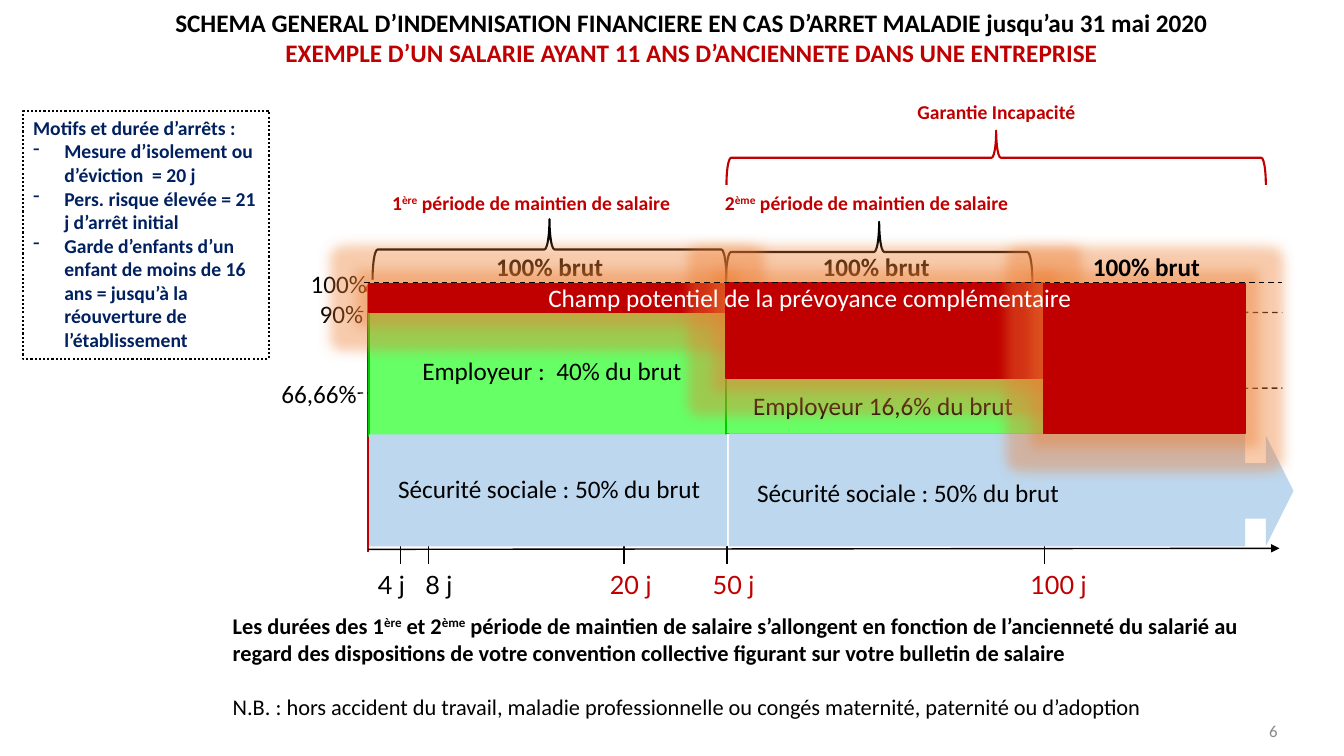
import pptx
import pptx.util
import pptx.dml.color
import pptx.enum.dml
import pptx.enum.shapes
import pptx.enum.text
import pptx.oxml
import pptx.oxml.ns
import lxml.etree

RGBColor = pptx.dml.color.RGBColor
BLACK = RGBColor(0x00, 0x00, 0x00)
WHITE = RGBColor(0xFF, 0xFF, 0xFF)
GREY = RGBColor(0x89, 0x89, 0x89)
RED = RGBColor(0xC0, 0x00, 0x00)
NAVY = RGBColor(0x00, 0x20, 0x60)
BLUE = RGBColor(0xBD, 0xD7, 0xEE)
GREEN = RGBColor(0x66, 0xFF, 0x66)
DARK_GREEN = RGBColor(0x00, 0xCC, 0x00)

SHAPE = pptx.enum.shapes.MSO_SHAPE
DASH = pptx.enum.dml.MSO_LINE.DASH
DOTS = pptx.enum.dml.MSO_LINE.ROUND_DOT
ALIGN = pptx.enum.text.PP_ALIGN
ANCHOR = pptx.enum.text.MSO_ANCHOR
FIT = pptx.enum.text.MSO_AUTO_SIZE

ROWS = 75
START, DAY_50, DAY_100, END, AXIS_END = 36.6, 72, 103.5, 123.5, 127.2
FULL, NINETY, EMPLOYER_2, HALF, BASE = 28.1, 31, 37.5, 43, 54.2

GLOW = ('<a:effectLst %s><a:glow rad="228600"><a:srgbClr val="ED7D31">'
        '<a:alpha val="40000"/></a:srgbClr></a:glow></a:effectLst>'
        % pptx.oxml.ns.nsdecls("a"))


def add_sub(parent, tag, **attrs):
    return lxml.etree.SubElement(parent, pptx.oxml.ns.qn(tag), attrs)


def write(p, text, size=18, color=BLACK, bold=False, font="Calibri",
          align=ALIGN.LEFT, before=0, bullet=None):
    p.alignment = align
    if before:
        p.space_before = pptx.util.Pt(before)
    if bullet:
        pPr = p._p.get_or_add_pPr()
        indent = pptx.util.Inches(0.31)
        pPr.set("marL", str(indent))
        pPr.set("indent", str(-indent))
        add_sub(pPr, "a:buChar", char=bullet)
    for i, part in enumerate(text.split("^")):
        r = p.add_run()
        r.text = part
        r.font.size = pptx.util.Pt(size)
        r.font.name = font
        r.font.bold = bold
        r.font.color.rgb = color
        if i % 2:
            r._r.get_or_add_rPr().set("baseline", "30000")


class Board:
    def __init__(self, prs):
        self.slide = prs.slides.add_slide(prs.slide_layouts[6])
        self.cell = prs.slide_height / ROWS

    def grid(self, *cells):
        return [round(c * self.cell) for c in cells]

    def stroke(self, line, color, width, dash=None):
        line.color.rgb = color
        line.width = pptx.util.Pt(width)
        if dash:
            line.dash_style = dash

    def fill_text(self, sp, paragraphs, inset=True, anchor=ANCHOR.TOP, **fmt):
        tf = sp.text_frame
        tf.word_wrap = True
        tf.auto_size = FIT.NONE
        tf.vertical_anchor = anchor
        if not inset:
            tf.margin_left = tf.margin_right = tf.margin_top = tf.margin_bottom = 0
        if isinstance(paragraphs, str):
            paragraphs = [(paragraphs, {})]
        for i, (text, extra) in enumerate(paragraphs):
            p = tf.add_paragraph() if i else tf.paragraphs[0]
            write(p, text, **{**fmt, **extra})

    def text(self, x, y, w, h, paragraphs, **fmt):
        sp = self.slide.shapes.add_textbox(*self.grid(x, y, w, h))
        self.fill_text(sp, paragraphs, **fmt)

    def shape(self, x, y, w, h, fill=None, line=None, width=1, dash=None,
              kind=SHAPE.RECTANGLE, glow=False):
        sp = self.slide.shapes.add_shape(kind, *self.grid(x, y, w, h))
        sp.shadow.inherit = False
        if fill is None:
            sp.fill.background()
        else:
            sp.fill.solid()
            sp.fill.fore_color.rgb = fill
        if line is None:
            sp.line.fill.background()
        else:
            self.stroke(sp.line, line, width, dash)
        if glow:
            spPr = sp._element.spPr
            old = spPr.find(pptx.oxml.ns.qn("a:effectLst"))
            spPr.replace(old, pptx.oxml.parse_xml(GLOW))
        return sp

    def brace(self, x, y, w, h, color):
        sp = self.shape(x + (w - h) / 2, y + (h - w) / 2, h, w, line=color,
                        width=1.5, kind=SHAPE.RIGHT_BRACE)
        sp.rotation = 270

    def line(self, x1, y1, x2, y2, color=BLACK, dash=None, arrow=False):
        cx = self.slide.shapes.add_connector(
            pptx.enum.shapes.MSO_CONNECTOR.STRAIGHT, *self.grid(x1, y1, x2, y2))
        self.stroke(cx.line, color, 1, dash)
        if arrow:
            add_sub(cx.line._get_or_add_ln(), "a:tailEnd", type="triangle")
        add_sub(cx._element.spPr, "a:effectLst")


def draw_axes(b):
    for x, shift, label, color in [
            (39.7, -3.2, "4 j", BLACK), (42.5, -1.3, "8 j", BLACK),
            (61.9, -2.4, "20 j", RED), (72.1, -2.4, "50 j", RED),
            (103.6, -2.4, "100 j", RED)]:
        b.line(x, BASE, x, 56)
        b.text(x + shift, 56, 8.8, 4, label, color=color, font="Lato")
    b.line(36.5, 54.8, 36.5, FULL, RED, arrow=True)
    b.line(36.5, 54.5, 126.9, 54.4, arrow=True)
    b.line(35.5, 30.9, AXIS_END, 31, dash=DASH)
    b.line(34.5, 39, AXIS_END, 38.5, dash=DASH)
    for x, y, w, label in [(31.7, 29.6, 5, "90%"), (30.8, 26.6, 6.8, "100%"),
                           (27.9, 37.5, 8.7, "66,66%")]:
        b.text(x, y, w, 3, label, inset=False)


def draw_shares(b):
    social = "Sécurité sociale : 50% du brut"
    b.shape(START, NINETY, DAY_50 - START, 12.3, GREEN, DARK_GREEN)
    b.shape(START, 43.1, 35.5, 11.1, BLUE)
    b.fill_text(b.shape(38.5, 46.5, 32.8, 4, BLUE), social)
    arrow = b.shape(115.7, 43.2, 12.6, 11, BLUE, kind=SHAPE.RIGHT_ARROW)
    arrow.adjustments[0], arrow.adjustments[1] = 0.5, 0.25
    b.shape(DAY_50, EMPLOYER_2, DAY_100 - DAY_50, 5.5, GREEN, DARK_GREEN)
    b.text(72.6, 38.2, 30, 4, "Employeur 16,6% du brut", align=ALIGN.CENTER)


def draw_periods(b):
    b.brace(72.05, 12.95, 53.5, 5.4, RED)
    b.brace(36.95, 21.75, 35.1, 6, BLACK)
    b.brace(DAY_50, 22, 30.4, 6, BLACK)
    period = " période de maintien de salaire"
    for x, y, w, label in [(37.9, 18.4, 30.2, "1^ère^" + period),
                           (70.9, 18.4, 31.5, "2^ème^" + period),
                           (90, 9.4, 19.9, "Garantie Incapacité")]:
        b.text(x, y, w, 3.4, label, size=14, color=RED, bold=True)


def draw_cover(b):
    gross = [(x, 24.9, 16.4, 3, "100% brut") for x in (49.2, 81.6, 108.4)]
    for spot in gross[:2]:
        b.text(*spot, inset=False, bold=True)
    b.text(40.9, 34.8, 29.9, 4, "Employeur :  40% du brut")
    b.shape(72.3, HALF, 51.2, 11.2, BLUE)
    b.fill_text(b.shape(74.1, 46.9, 35.5, 4, BLUE),
                "Sécurité sociale : 50% du brut")
    for left, right, bottom in [(START, DAY_50, NINETY),
                                (DAY_50, DAY_100, EMPLOYER_2),
                                (DAY_100, END, HALF)]:
        b.shape(left, FULL, right - left, bottom - FULL, RED, RED, glow=True)
    b.line(36.1, 28, AXIS_END, 28, dash=DASH)
    b.text(*gross[2], inset=False, bold=True)
    b.text(53.4, 27.5, 57.7, 4,
           "Champ potentiel de la prévoyance complémentaire", color=WHITE)


def draw_notes(b):
    b.text(12.7, 0.2, 111.8, 7.1, [
        ("SCHEMA GENERAL D’INDEMNISATION FINANCIERE EN CAS D’ARRET MALADIE "
         "jusqu’au 31 mai 2020", {}),
        ("EXEMPLE D’UN SALARIE AYANT 11 ANS D’ANCIENNETE DANS UNE ENTREPRISE",
         {"color": RED})], bold=True, align=ALIGN.CENTER)
    b.text(22.1, 60.2, 104.7, 11.8, [
        ("Les durées des 1^ère^ et 2^ème^ période de maintien de salaire "
         "s’allongent en fonction de l’ancienneté du salarié au regard des "
         "dispositions de votre convention collective figurant sur votre "
         "bulletin de salaire", {"bold": True}),
        ("N.B. : hors accident du travail, maladie professionnelle ou congés "
         "maternité, paternité ou d’adoption", {"before": 19.5})], size=16)
    reasons = ["Mesure d’isolement ou d’éviction  = 20 j",
               "Pers. risque élevée = 21 j d’arrêt initial",
               "Garde d’enfants d’un enfant de moins de 16 ans = jusqu’à la "
               "réouverture de l’établissement"]
    sp = b.shape(2.3, 11, 24.4, 24.6, line=BLACK, width=1.5, dash=DOTS)
    b.fill_text(sp, [("Motifs et durée d’arrêts :", {})]
                + [(reason, {"bullet": "-"}) for reason in reasons],
                size=14, color=NAVY, bold=True)
    b.text(121, 70, 6.7, 5, "6", size=12, color=GREY, align=ALIGN.RIGHT,
           anchor=ANCHOR.MIDDLE)


def main():
    prs = pptx.Presentation()
    prs.slide_width = pptx.util.Inches(13.33)
    prs.slide_height = pptx.util.Inches(7.5)
    b = Board(prs)
    for draw in (draw_axes, draw_shares, draw_periods, draw_cover, draw_notes):
        draw(b)
    prs.save("out.pptx")


if __name__ == "__main__":
    main()
